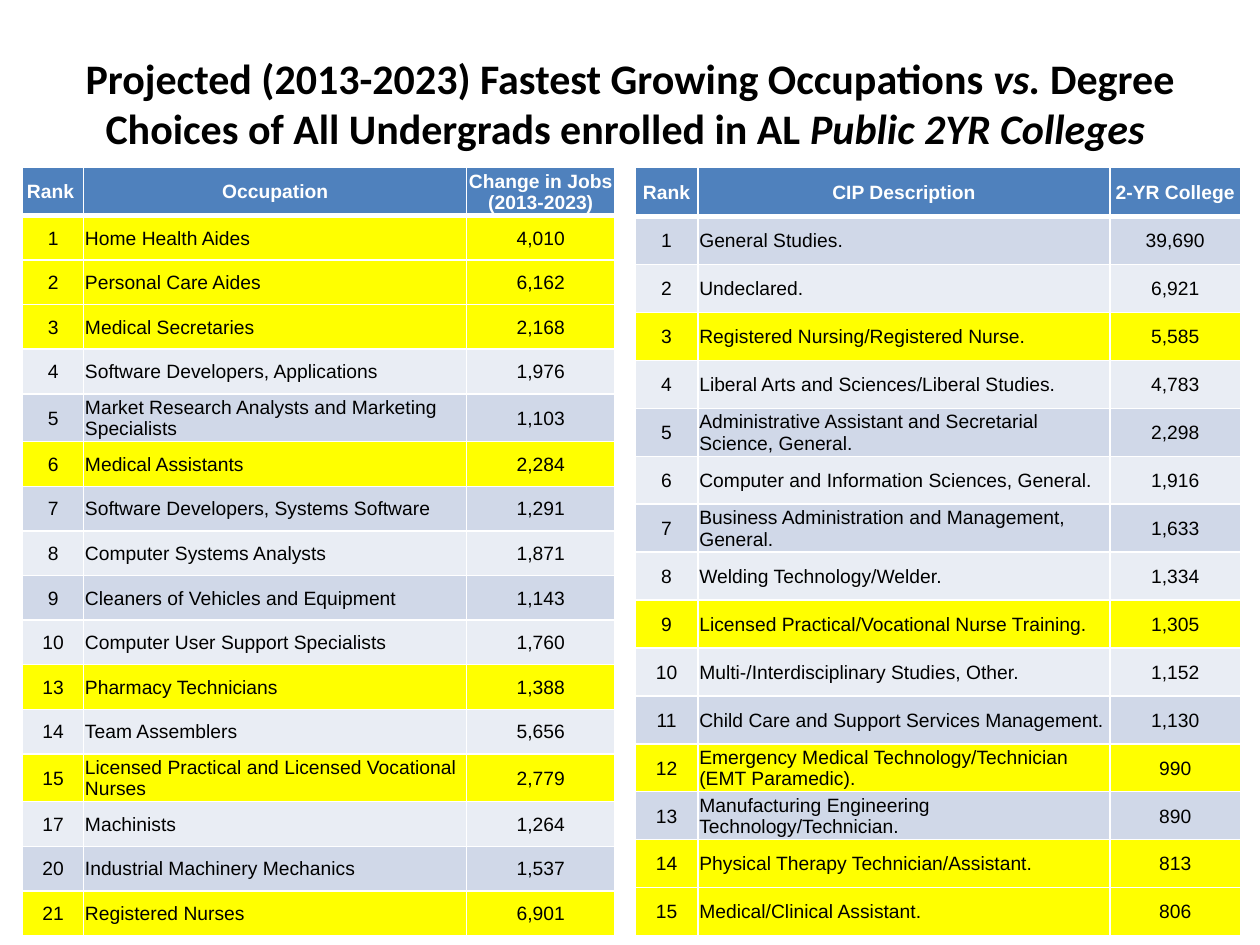
from dataclasses import dataclass

from lxml.etree import SubElement
from pptx import Presentation
from pptx.dml.color import RGBColor
from pptx.enum.text import MSO_ANCHOR, PP_ALIGN
from pptx.oxml.ns import qn
from pptx.util import Emu, Inches, Pt

SLIDE_WIDTH, SLIDE_HEIGHT = Inches(10), Inches(7.5)
GRID_COLUMNS, GRID_ROWS = 100, 75


@dataclass(frozen=True)
class Theme:
    """Colours, fonts and type sizes of the slide."""
    header: str = "4F81BD"
    odd_band: str = "D0D8E8"
    even_band: str = "E9EDF4"
    highlight: str = "FFFF00"
    white: str = "FFFFFF"
    black: str = "000000"
    title_font: str = "Calibri"
    table_font: str = "Arial"
    title_size: int = 24
    table_size: int = 11
    thin_border: int = 1
    thick_border: int = 3


@dataclass(frozen=True)
class Entry:
    """One ranked line of a table."""
    rank: int
    name: str
    count: int
    highlighted: bool = False


@dataclass(frozen=True)
class Ranking:
    """A ranked table with its place in grid units."""
    left: float
    column_widths: tuple[float, ...]
    headings: tuple[str, ...]
    header_height: float
    entries: tuple[Entry, ...]
    tall_ranks: tuple[int, ...] = ()
    tall_height: float = 3.8
    top: float = 13.3
    height: float = 61


THEME = Theme()

TITLE_SPANS = (
    ("Projected (2013-2023) Fastest Growing Occupations ", False),
    ("vs.", True),
    (" Degree Choices of All Undergrads enrolled in AL ", False),
    ("Public 2YR Colleges ", True),
)

OCCUPATIONS = Ranking(
    left=1.8,
    column_widths=(4.85, 30.4, 11.75),
    headings=("Rank ", "Occupation", "Change in Jobs (2013-2023)"),
    header_height=3.8,
    tall_ranks=(5, 15),
    entries=(
        Entry(1, "Home Health Aides", 4010, True),
        Entry(2, "Personal Care Aides", 6162, True),
        Entry(3, "Medical Secretaries", 2168, True),
        Entry(4, "Software Developers, Applications", 1976),
        Entry(5, "Market Research Analysts and Marketing Specialists", 1103),
        Entry(6, "Medical Assistants", 2284, True),
        Entry(7, "Software Developers, Systems Software", 1291),
        Entry(8, "Computer Systems Analysts", 1871),
        Entry(9, "Cleaners of Vehicles and Equipment", 1143),
        Entry(10, "Computer User Support Specialists", 1760),
        Entry(13, "Pharmacy Technicians", 1388, True),
        Entry(14, "Team Assemblers", 5656),
        Entry(15, "Licensed Practical and Licensed Vocational Nurses", 2779, True),
        Entry(17, "Machinists", 1264),
        Entry(20, "Industrial Machinery Mechanics", 1537),
        Entry(21, "Registered Nurses", 6901, True),
    ),
)

DEGREES = Ranking(
    left=50.4,
    column_widths=(5, 32.7, 10.35),
    headings=("Rank", "CIP Description", "2-YR College"),
    header_height=3.9,
    entries=(
        Entry(1, "General Studies.", 39690),
        Entry(2, "Undeclared.", 6921),
        Entry(3, "Registered Nursing/Registered Nurse.", 5585, True),
        Entry(4, "Liberal Arts and Sciences/Liberal Studies.", 4783),
        Entry(5, "Administrative Assistant and Secretarial Science, General.", 2298),
        Entry(6, "Computer and Information Sciences, General.", 1916),
        Entry(7, "Business Administration and Management, General.", 1633),
        Entry(8, "Welding Technology/Welder.", 1334),
        Entry(9, "Licensed Practical/Vocational Nurse Training.", 1305, True),
        Entry(10, "Multi-/Interdisciplinary Studies, Other.", 1152),
        Entry(11, "Child Care and Support Services Management.", 1130),
        Entry(12, "Emergency Medical Technology/Technician (EMT Paramedic).", 990, True),
        Entry(13, "Manufacturing Engineering Technology/Technician.", 890),
        Entry(14, "Physical Therapy Technician/Assistant.", 813, True),
        Entry(15, "Medical/Clinical Assistant.", 806, True),
    ),
)


def across(columns: float) -> Emu:
    """Convert grid columns to a length."""
    return Emu(round(SLIDE_WIDTH * columns / GRID_COLUMNS))


def down(rows: float) -> Emu:
    """Convert grid rows to a length."""
    return Emu(round(SLIDE_HEIGHT * rows / GRID_ROWS))


def style_font(font, name: str, size: int, color: str, bold: bool) -> None:
    """Apply the common font settings."""
    font.name, font.size, font.bold = name, Pt(size), bold
    font.color.rgb = RGBColor.from_string(color)


def draw_title(slide) -> None:
    """Place and fill the title placeholder."""
    title = slide.shapes.title
    title.left, title.top = across(5), down(3)
    title.width, title.height = across(90), down(10.3)
    frame = title.text_frame
    frame.word_wrap = True
    frame.vertical_anchor = MSO_ANCHOR.MIDDLE
    para = frame.paragraphs[0]
    para.alignment = PP_ALIGN.CENTER
    style_font(para.font, THEME.title_font, THEME.title_size, THEME.black, True)
    for text, italic in TITLE_SPANS:
        span = para.add_run()
        span.text, span.font.italic = text, italic


def draw_borders(cell, bottom_width: int) -> None:
    """Draw white lines on the four sides of a cell."""
    properties = cell._tc.get_or_add_tcPr()
    for side in ("lnL", "lnR", "lnT", "lnB"):
        width = bottom_width if side == "lnB" else THEME.thin_border
        line = SubElement(properties, qn(f"a:{side}"), w=str(Pt(width)))
        SubElement(SubElement(line, qn("a:solidFill")), qn("a:srgbClr"), val=THEME.white)


def fill_cell(cell, text: str, fill: str, centred: bool, header: bool) -> None:
    """Write and format one table cell."""
    draw_borders(cell, THEME.thick_border if header else THEME.thin_border)
    cell.fill.solid()
    cell.fill.fore_color.rgb = RGBColor.from_string(fill)
    cell.vertical_anchor = MSO_ANCHOR.MIDDLE
    cell.margin_left = cell.margin_right = cell.margin_top = Inches(0.01)
    cell.margin_bottom = 0
    cell.text = text
    para = cell.text_frame.paragraphs[0]
    para.alignment = PP_ALIGN.CENTER if centred else PP_ALIGN.LEFT
    color = THEME.white if header else THEME.black
    style_font(para.font, THEME.table_font, THEME.table_size, color, header)


def draw_ranking(slide, ranking: Ranking) -> None:
    """Draw one ranked table with banded and highlighted rows."""
    entries = ranking.entries
    table = slide.shapes.add_table(
        len(entries) + 1, len(ranking.headings), across(ranking.left), down(ranking.top),
        across(sum(ranking.column_widths)), down(ranking.height)).table
    for column, width in zip(table.columns, ranking.column_widths):
        column.width = across(width)
    tall_count = len(ranking.tall_ranks)
    spare = ranking.height - ranking.header_height - tall_count * ranking.tall_height
    plain_height = spare / (len(entries) - tall_count)
    table.rows[0].height = down(ranking.header_height)
    for index, heading in enumerate(ranking.headings):
        fill_cell(table.cell(0, index), heading, THEME.header, True, True)
    for row, entry in enumerate(entries, 1):
        tall = entry.rank in ranking.tall_ranks
        table.rows[row].height = down(ranking.tall_height if tall else plain_height)
        band = THEME.odd_band if row % 2 else THEME.even_band
        fill = THEME.highlight if entry.highlighted else band
        for index, text in enumerate((str(entry.rank), entry.name, f"{entry.count:,}")):
            fill_cell(table.cell(row, index), text, fill, index != 1, False)


def main() -> None:
    """Build and save the deck."""
    deck = Presentation()
    deck.slide_width, deck.slide_height = SLIDE_WIDTH, SLIDE_HEIGHT
    page = deck.slides.add_slide(deck.slide_layouts[5])
    draw_title(page)
    for ranking in (OCCUPATIONS, DEGREES):
        draw_ranking(page, ranking)
    deck.save("out.pptx")


if __name__ == "__main__":
    main()
